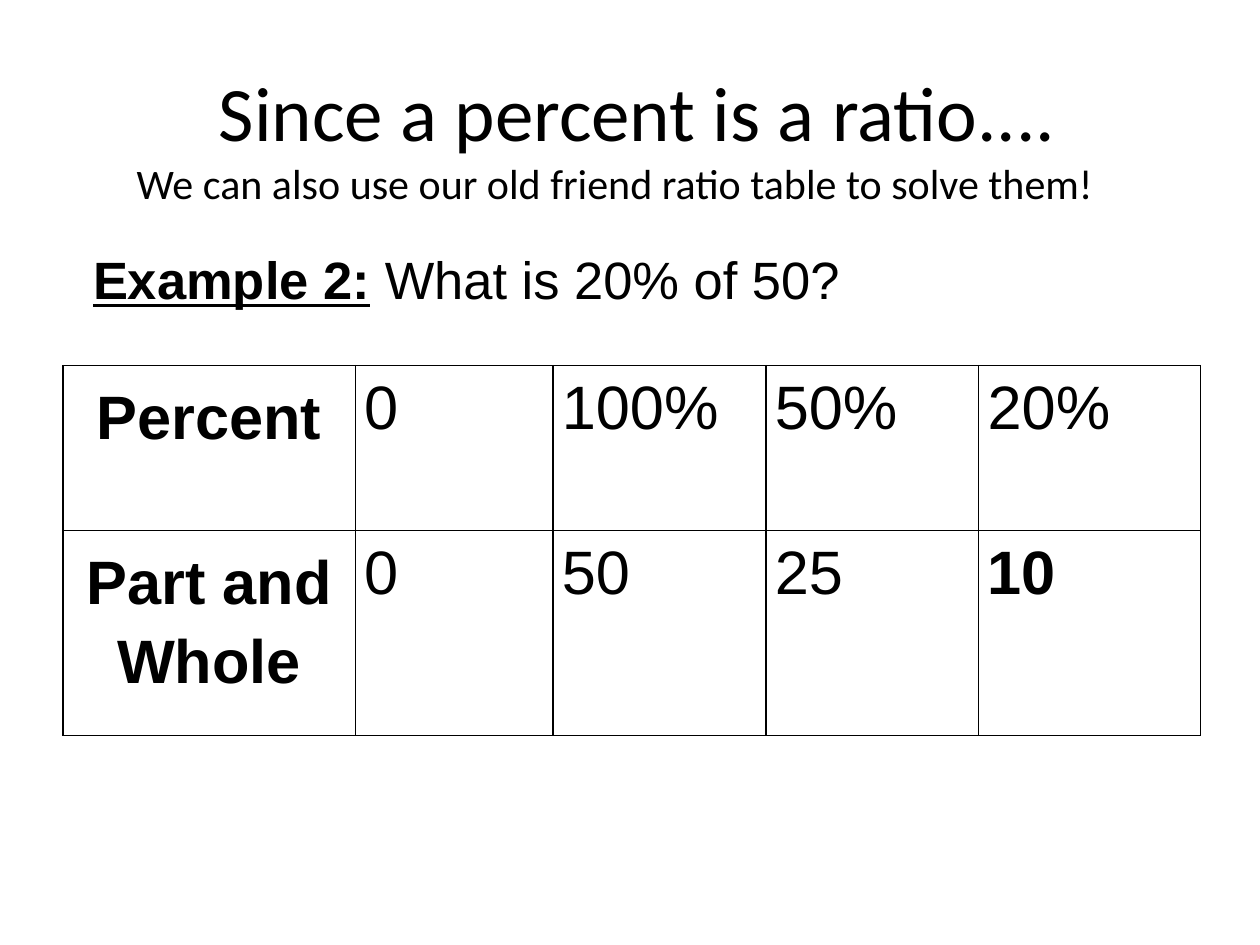
import pptx
import pptx.util
import pptx.dml.color
import pptx.enum.text
import pptx.oxml
import pptx.oxml.ns

Inches, Pt = pptx.util.Inches, pptx.util.Pt
CENTER = pptx.enum.text.PP_ALIGN.CENTER
COLORS = {"text": "000000", "border": "000000"}

prs = pptx.Presentation()
prs.slide_width, prs.slide_height = Inches(10), Inches(7.5)
s = prs.slides.add_slide(prs.slide_layouts[6])


def style(p, font, size, bold=False):
    p.font.name = font
    p.font.size = Pt(size)
    p.font.bold = bold
    p.font.color.rgb = pptx.dml.color.RGBColor.from_string(COLORS["text"])


def add_text(left, top, width, height, font, size):
    tf = s.shapes.add_textbox(Inches(left), Inches(top), Inches(width), Inches(height)).text_frame
    tf.word_wrap = True
    tf.margin_left = tf.margin_right = tf.margin_top = tf.margin_bottom = Inches(0.1)
    p = tf.paragraphs[0]
    style(p, font, size)
    return tf, p


# Title
tf, p = add_text(0.5, 0.3, 9.26, 1.15, "Calibri", 44)
tf.vertical_anchor = pptx.enum.text.MSO_ANCHOR.MIDDLE
p.alignment = CENTER
p.add_run().text = "Since a percent is a ratio.... "

# Subtitle
tf, p = add_text(0.5, 1.15, 8.76, 0.66, "Calibri", 24)
p.alignment = CENTER
p.add_run().text = "We can also use our old friend ratio table to solve them!"

# Example question with a hanging indent
tf, p = add_text(0.5, 1.86, 6.71, 0.79, "Arial", 30)
p.space_before = Pt(6.4)
pPr = p._p.get_or_add_pPr()
pPr.set("marL", str(Inches(0.38)))
pPr.set("indent", str(Inches(-0.24)))
r = p.add_run()
r.text = "Example 2:"
r.font.bold = r.font.underline = True
p.add_run().text = " What is 20% of 50?"

# Ratio table
rows = [
    ["Percent", "0", "100%", "50%", "20%"],
    ["Part and Whole", "0", "50", "25", "10"],
]
col_widths = [2.32, 1.57, 1.69, 1.69, 1.76]
row_heights = [1.31, 1.63]
table = s.shapes.add_table(len(rows), len(col_widths), Inches(0.5), Inches(2.9),
                           Inches(sum(col_widths)), Inches(sum(row_heights))).table
table.first_row = table.horz_banding = False
for col, width in zip(table.columns, col_widths):
    col.width = Inches(width)
for row, height in zip(table.rows, row_heights):
    row.height = Inches(height)

for i, values in enumerate(rows):
    for j, value in enumerate(values):
        cell = table.cell(i, j)
        cell.margin_left = cell.margin_right = Inches(0.07)
        cell.margin_top = cell.margin_bottom = Inches(0.07)
        p = cell.text_frame.paragraphs[0]
        p.add_run().text = value
        style(p, "Arial", 35, bold=j == 0 or value == "10")
        if j == 0:
            p.alignment = CENTER
            p.line_spacing = 1.15
        # Borders come before the fill in the cell properties
        tcPr = cell._tc.get_or_add_tcPr()
        for side in ("lnL", "lnR", "lnT", "lnB"):
            tcPr.append(pptx.oxml.parse_xml(
                f'<a:{side} {pptx.oxml.ns.nsdecls("a")} w="{Pt(0.75)}"><a:solidFill>'
                f'<a:srgbClr val="{COLORS["border"]}"/></a:solidFill></a:{side}>'))
        cell.fill.background()

prs.save("out.pptx")
